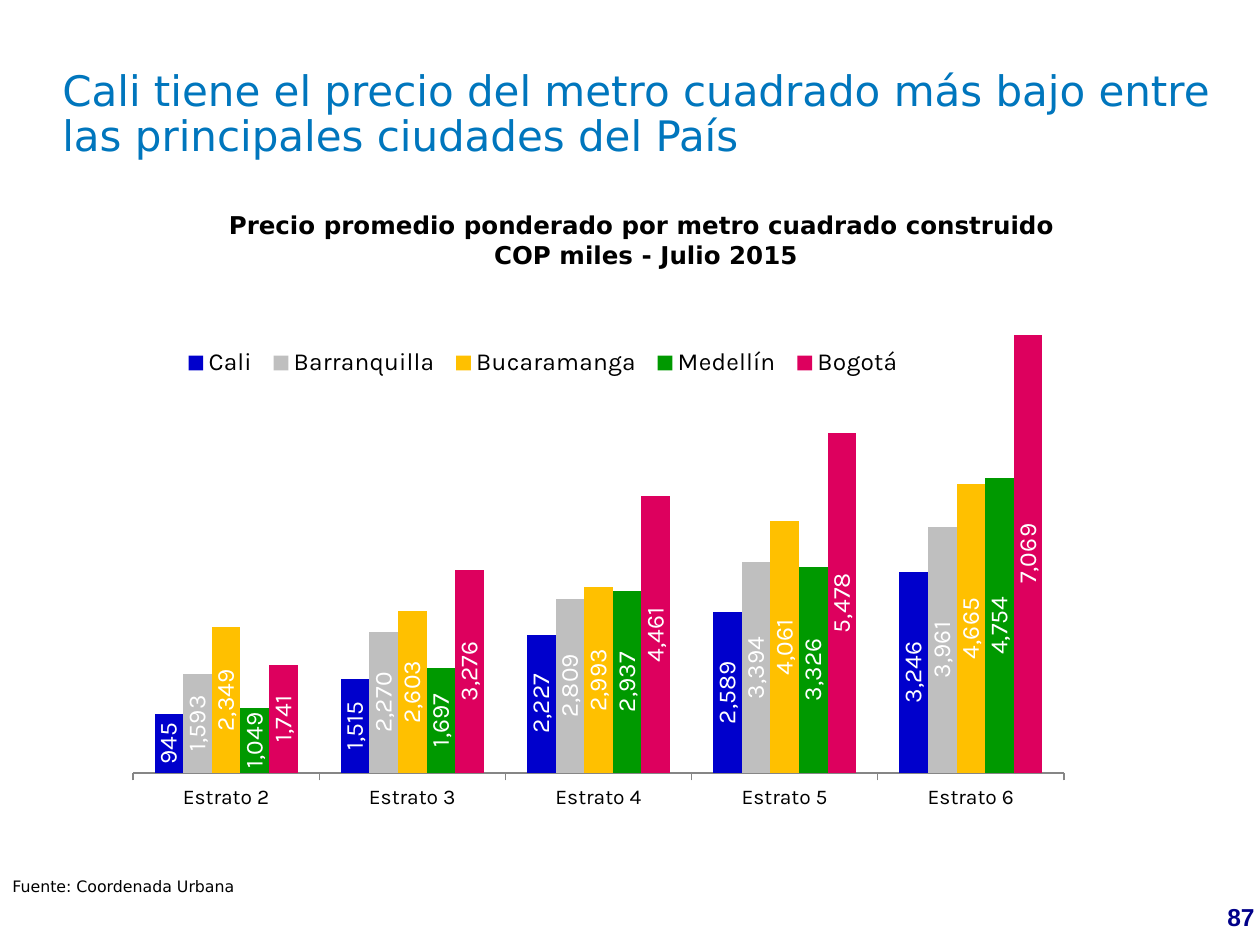
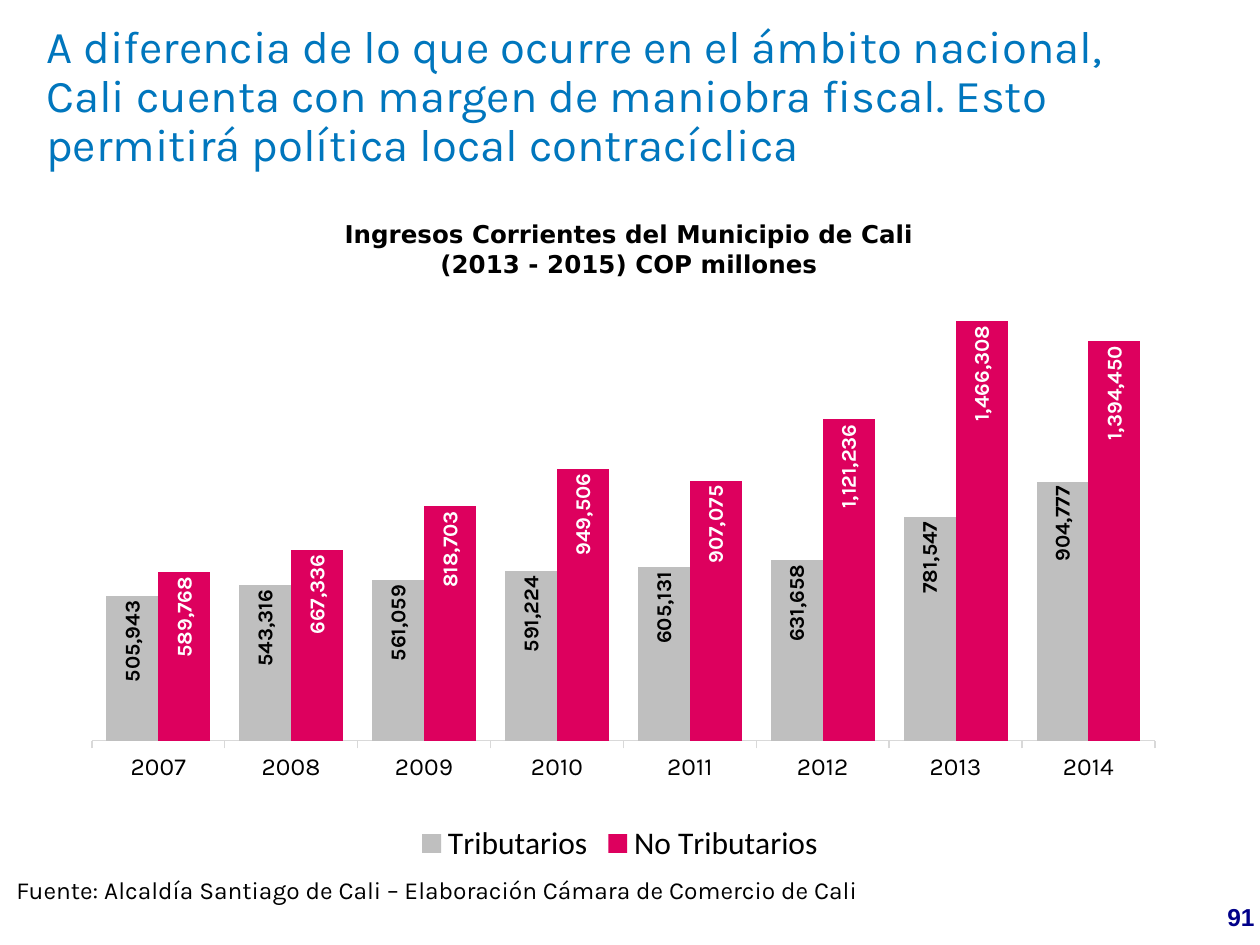
import lxml.etree
import pptx
import pptx.chart.data
import pptx.dml.color
import pptx.enum.chart
import pptx.enum.text
import pptx.oxml.ns
import pptx.util

PX = 914400 / 126
SLIDE_WIDTH, SLIDE_HEIGHT = 1260, 945
BLACK, WHITE, TITLE_BLUE, NAVY = "000000", "FFFFFF", "0076BD", "000089"
BLUE, GREY, YELLOW, GREEN, MAGENTA = "0000CC", "BFBFBF", "FFC000", "009900", "DD005E"
AXIS_GREY, PALE_GREY = "868686", "D9D9D9"
SANS, KARLA = "DejaVu Sans", "Karla"
ALIGN = pptx.enum.text.PP_ALIGN
ANCHOR = pptx.enum.text.MSO_ANCHOR
LABEL = pptx.enum.chart.XL_LABEL_POSITION
NUMBER_FORMAT = "#,##0"


def emu(*lengths):
    """Turn px lengths into EMU."""
    return [pptx.util.Emu(round(length * PX)) for length in lengths]


def rgb(value):
    """Turn a hex string into a colour."""
    return pptx.dml.color.RGBColor.from_string(value)


def set_font(font, size, color=BLACK, name=None, bold=False):
    """Format any font, of text or of a chart part."""
    font.size = pptx.util.Pt(size)
    font.color.rgb = rgb(color)
    font.bold = bold
    if name:
        font.name = name


def add_text(slide, box, text, size, color=BLACK, name=SANS, bold=False,
             align=ALIGN.LEFT, anchor=ANCHOR.TOP, spacing=None):
    """Add a wrapped text box with one paragraph per line of text."""
    frame = slide.shapes.add_textbox(*emu(*box)).text_frame
    frame.word_wrap = True
    frame.vertical_anchor = anchor
    for number, line in enumerate(text.split("\n")):
        paragraph = frame.add_paragraph() if number else frame.paragraphs[0]
        paragraph.alignment = align
        if spacing:
            paragraph.line_spacing = spacing
        run = paragraph.add_run()
        run.text = line
        set_font(run.font, size, color, name, bold)


def add_title(slide, box, text, size, name):
    """Add the blue slide title."""
    add_text(slide, box, text, size, color=TITLE_BLUE, name=name,
             anchor=ANCHOR.MIDDLE, spacing=0.9)


def add_chart_heading(slide, box, text):
    """Add the bold heading above a chart."""
    add_text(slide, box, text, 14, bold=True, align=ALIGN.CENTER)


def add_page_number(slide, number):
    """Add the page number in the bottom right corner."""
    add_text(slide, (SLIDE_WIDTH - 58, SLIDE_HEIGHT - 49, 78, 43), number, 14,
             color=NAVY, name="Arial", bold=True, align=ALIGN.CENTER)


def place_part(part, index, box, chart_box, inner=False):
    """Fix a chart part at a px box relative to the chart."""
    qn = pptx.oxml.ns.qn
    for old in part.findall(qn("c:layout")):
        part.remove(old)
    layout = lxml.etree.SubElement(part, qn("c:layout"))
    part.insert(index, layout)
    manual = lxml.etree.SubElement(layout, qn("c:manualLayout"))
    settings = [("layoutTarget", "inner")] if inner else []
    settings += [("xMode", "edge"), ("yMode", "edge")]
    width, height = chart_box[2:]
    settings += [(key, f"{length / whole:.4f}") for key, length, whole
                 in zip("xywh", box, (width, height, width, height))]
    for key, value in settings:
        lxml.etree.SubElement(manual, qn("c:" + key)).set("val", value)


def style_series(series, color, label_color, label_size, label_position, bold):
    """Fill a series and give it upright value labels."""
    series.format.fill.solid()
    series.format.fill.fore_color.rgb = rgb(color)
    series.invert_if_negative = False
    labels = series.data_labels
    labels.show_value = True
    labels.number_format = NUMBER_FORMAT
    labels.number_format_is_linked = False
    labels.position = label_position
    set_font(labels.font, label_size, label_color, KARLA, bold)
    labels._element.find(".//" + pptx.oxml.ns.qn("a:bodyPr")).set("rot", "-5400000")


def add_column_chart(slide, box, categories, series_rows, plot_box, maximum, gap,
                     font, axis_size, axis_color, legend_size, label_size,
                     label_position, label_bold=False, legend_box=None):
    """Add a clustered column chart with a hidden value axis."""
    data = pptx.chart.data.CategoryChartData(number_format=NUMBER_FORMAT)
    data.categories = categories
    for name, _, _, values in series_rows:
        data.add_series(name, values)
    kind = pptx.enum.chart.XL_CHART_TYPE.COLUMN_CLUSTERED
    chart = slide.shapes.add_chart(kind, *emu(*box), data).chart
    chart.has_title = False
    set_font(chart.font, 18, name=font)

    plot = chart.plots[0]
    plot.vary_by_categories = False
    plot.gap_width = gap
    plot.overlap = 0
    for series, (_, color, label_color, _) in zip(plot.series, series_rows):
        style_series(series, color, label_color, label_size, label_position, label_bold)

    chart.value_axis.visible = False
    chart.value_axis.has_major_gridlines = False
    chart.value_axis.minimum_scale = 0
    chart.value_axis.maximum_scale = maximum
    axis = chart.category_axis
    axis.major_tick_mark = pptx.enum.chart.XL_TICK_MARK.OUTSIDE
    axis.format.line.color.rgb = rgb(axis_color)
    axis.format.line.width = pptx.util.Pt(0.75)
    set_font(axis.tick_labels.font, axis_size, name=KARLA)

    chart.has_legend = True
    legend = chart.legend
    legend.position = pptx.enum.chart.XL_LEGEND_POSITION.BOTTOM
    legend.include_in_layout = False
    set_font(legend.font, legend_size, name=font)
    plot_area = chart._chartSpace.find(".//" + pptx.oxml.ns.qn("c:plotArea"))
    place_part(plot_area, 0, plot_box, box, inner=True)
    if legend_box:
        place_part(legend._element, 1, legend_box, box)


def build_price_slide(slide):
    """Build the slide on prices per square metre."""
    add_page_number(slide, "87")
    add_chart_heading(slide, (209, 204, 874, 72),
                      "Precio promedio ponderado por metro cuadrado construido \n"
                      "COP miles - Julio 2015")
    add_text(slide, (0, 871, 1155, 32), "Fuente: Coordenada Urbana", 9)
    add_column_chart(
        slide, (115, 265, 970, 606),
        [f"Estrato {level}" for level in range(2, 7)],
        [("Cali", BLUE, WHITE, (945, 1515, 2227, 2589, 3246)),
         ("Barranquilla", GREY, WHITE, (1593, 2270, 2809, 3394, 3961)),
         ("Bucaramanga", YELLOW, WHITE, (2349, 2603, 2993, 4061, 4665)),
         ("Medellín", GREEN, WHITE, (1049, 1697, 2937, 3326, 4754)),
         ("Bogotá", MAGENTA, WHITE, (1741, 3276, 4461, 5478, 7069))],
        plot_box=(18, 12, 931, 496), maximum=8000, gap=150, font=KARLA,
        axis_size=12, axis_color=AXIS_GREY, legend_size=14, label_size=14,
        label_position=LABEL.CENTER, legend_box=(60, 78, 736, 40))
    add_title(slide, (50, 66, 1174, 99),
              "Cali tiene el precio del metro cuadrado más bajo entre "
              "las principales ciudades del País", 24, SANS)


def build_income_slide(slide):
    """Build the slide on municipal income."""
    add_page_number(slide, "91")
    add_column_chart(
        slide, (65, 252, 1110, 617),
        [str(year) for year in range(2007, 2015)],
        [("Tributarios", GREY, BLACK,
          (505943, 543316, 561059, 591224, 605131, 631658, 781547, 904777)),
         ("No Tributarios", MAGENTA, WHITE,
          (589768, 667336, 818703, 949506, 907075, 1121236, 1466308, 1394450))],
        plot_box=(27, 59, 1063, 430), maximum=1500000, gap=56, font="Calibri",
        axis_size=14, axis_color=PALE_GREY, legend_size=18, label_size=12,
        label_position=LABEL.INSIDE_END, label_bold=True)
    add_chart_heading(slide, (195, 213, 868, 72),
                      "Ingresos Corrientes del Municipio de Cali\n"
                      "(2013 - 2015) COP millones")
    add_text(slide, (4, 869, 912, 43),
             "Fuente: Alcaldía Santiago de Cali – Elaboración Cámara de Comercio de Cali",
             14, name=KARLA)
    add_title(slide, (34, 40, 1171, 116),
              "A diferencia de lo que ocurre en el ámbito nacional, Cali cuenta con "
              "margen de maniobra fiscal. Esto permitirá política local contracíclica",
              26, KARLA)


def main():
    """Build and save the presentation."""
    deck = pptx.Presentation()
    deck.slide_width, deck.slide_height = emu(SLIDE_WIDTH, SLIDE_HEIGHT)
    for build in (build_price_slide, build_income_slide):
        build(deck.slides.add_slide(deck.slide_layouts[6]))
    deck.save("out.pptx")


if __name__ == "__main__":
    main()
